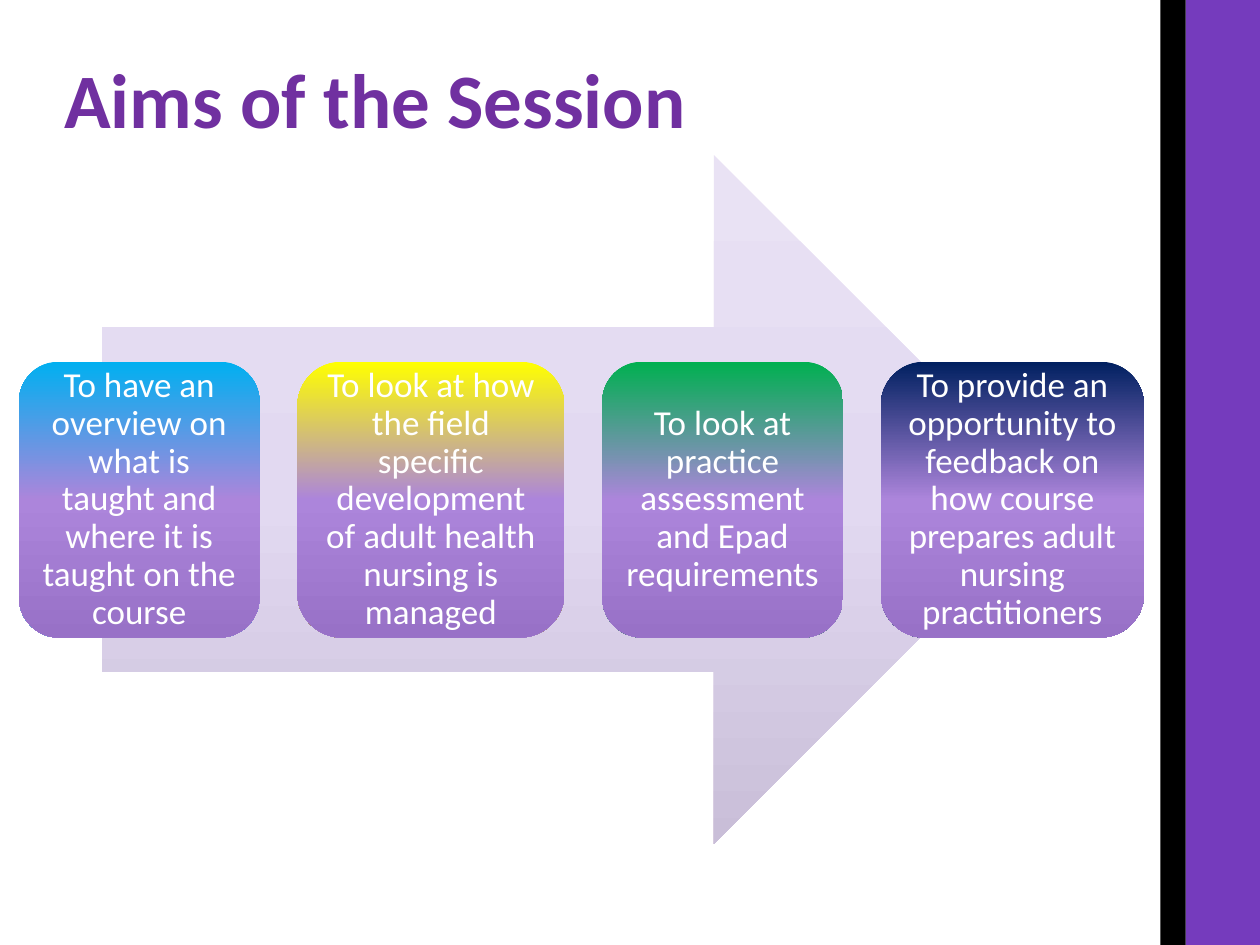
from lxml.etree import SubElement
from pptx import Presentation
from pptx.dml.color import RGBColor
from pptx.enum.shapes import MSO_SHAPE as Shape
from pptx.enum.text import MSO_ANCHOR as Anchor, MSO_AUTO_SIZE as AutoSize, PP_ALIGN as Align
from pptx.oxml.ns import qn
from pptx.util import Inches, Pt

PURPLE, BLACK = "753BBD", "000000"
ARROW_COLORS = ("E9E2F4", "E2D9F1", "C9BED8")
CARD_COLORS = ("AC85DB", "9871C7")
TITLE_FONT = {"name": "Calibri", "size": Pt(44), "bold": True}
CARD_FONT = {"name": "Calibri", "size": Pt(20)}

CARD_LEFT, CARD_TOP, CARD_HEIGHT, CARD_GAP = 0.15, 2.87, 2.19, 0.3
AIMS = [
    (1.91, "00B0F0", "To have an overview on what is taught and where it is taught on the course"),
    (2.12, "FFFF00", "To look at how the field specific development of adult health nursing is managed"),
    (1.91, "00B050", "To look at practice assessment and Epad requirements"),
    (2.09, "002060", "To provide an opportunity to feedback on how course prepares adult nursing practitioners"),
]


def color(value):
    return RGBColor.from_string(value)


def apply_format(target, values):
    for name, value in values.items():
        setattr(target, name, value)


def format_font(font, values, font_color):
    apply_format(font, values)
    font.color.rgb = color(font_color)


def add_shape(slide, kind, left, top, width, height):
    shape = slide.shapes.add_shape(
        kind, Inches(left), Inches(top), Inches(width), Inches(height))
    shape.shadow.inherit = False
    shape.line.fill.background()
    return shape


def add_bar(slide, left, width, fill_color):
    bar = add_shape(slide, Shape.RECTANGLE, left, 0, width, 7.5)
    bar.fill.solid()
    bar.fill.fore_color.rgb = color(fill_color)


def fill_gradient(shape, colors):
    """Fill from top to bottom with evenly spaced colours."""
    shape.fill.gradient()
    shape.fill.gradient_angle = 270
    stops = shape.element.spPr.find(qn("a:gradFill")).find(qn("a:gsLst"))
    for stop in list(stops):
        stops.remove(stop)
    for index, value in enumerate(colors):
        position = round(100000 * index / (len(colors) - 1))
        stop = SubElement(stops, qn("a:gs"), pos=str(position))
        SubElement(stop, qn("a:srgbClr"), val=value)


def add_title(slide, text):
    title = slide.shapes.title
    apply_format(title, {"left": Inches(0.41), "top": Inches(0.36),
                         "width": Inches(8.67), "height": Inches(1.42)})
    frame = title.text_frame
    frame.text = text
    apply_format(frame, {"vertical_anchor": Anchor.TOP, "word_wrap": True,
                         "auto_size": AutoSize.NONE})
    paragraph = frame.paragraphs[0]
    apply_format(paragraph, {"alignment": Align.LEFT, "space_after": Pt(8)})
    format_font(paragraph.font, TITLE_FONT, "7030A0")


def add_card(slide, left, width, top_color, text):
    card = add_shape(slide, Shape.ROUNDED_RECTANGLE, left, CARD_TOP, width, CARD_HEIGHT)
    fill_gradient(card, (top_color, *CARD_COLORS))
    frame = card.text_frame
    frame.text = text
    apply_format(frame, {"vertical_anchor": Anchor.MIDDLE, "word_wrap": True})
    for side in ("left", "top", "right", "bottom"):
        setattr(frame, f"margin_{side}", Inches(0.08))
    paragraph = frame.paragraphs[0]
    apply_format(paragraph, {"alignment": Align.CENTER, "line_spacing": 0.9})
    format_font(paragraph.font, CARD_FONT, "FFFFFF")


def main():
    presentation = Presentation()
    presentation.slide_width, presentation.slide_height = Inches(10), Inches(7.5)
    slide = presentation.slides.add_slide(presentation.slide_layouts[5])

    add_bar(slide, 9.41, 0.59, PURPLE)
    add_bar(slide, 9.21, 0.2, BLACK)
    add_title(slide, "Aims of the Session")
    arrow = add_shape(slide, Shape.RIGHT_ARROW, 0.81, 1.23, 7.59, 5.47)
    fill_gradient(arrow, ARROW_COLORS)

    left = CARD_LEFT
    for width, top_color, text in AIMS:
        add_card(slide, left, width, top_color, text)
        left += width + CARD_GAP

    presentation.save("out.pptx")


if __name__ == "__main__":
    main()
